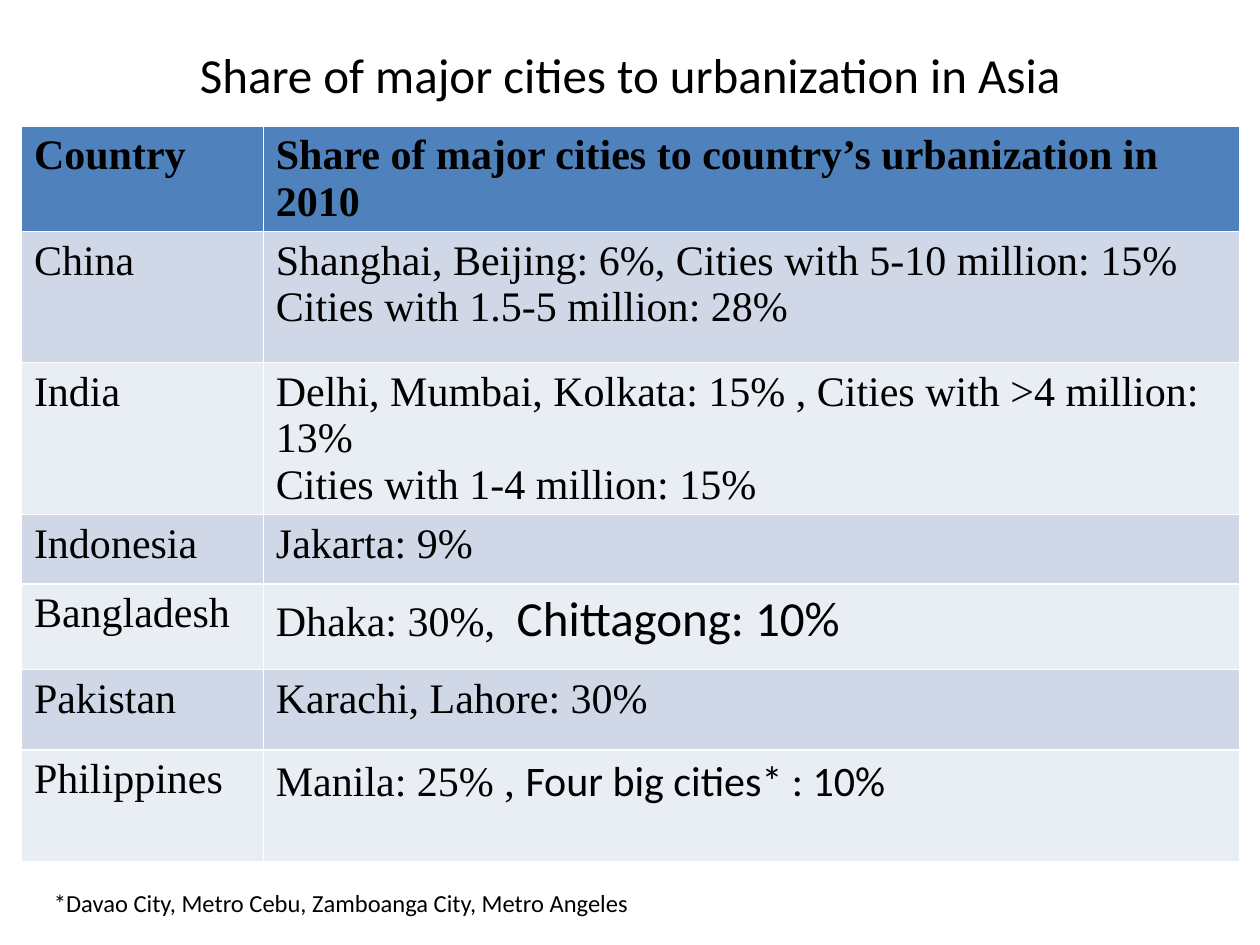
import pptx
import pptx.dml.color
import pptx.enum.text
import pptx.util

Inches = pptx.util.Inches
SERIF = "Times New Roman"
SANS = "Calibri"

TITLE = "Share of major cities to urbanization in Asia"
FOOTNOTE = "*Davao City, Metro Cebu, Zamboanga City, Metro Angeles"
HEADER = ("Country", "Share of major cities to country’s urbanization in 2010")
COUNTRIES = [
    ("China", ["Shanghai, Beijing: 6%, Cities with 5-10 million: 15%",
               "Cities with 1.5-5 million: 28%"]),
    ("India", ["Delhi, Mumbai, Kolkata: 15% , Cities with >4 million: 13%",
               "Cities with 1-4 million: 15%"]),
    ("Indonesia", ["Jakarta: 9%"]),
    ("Bangladesh", [[("Dhaka: 30%, ", SERIF, 24), (" Chittagong: 10%", SANS, 28)]]),
    ("Pakistan", ["Karachi, Lahore: 30%"]),
    ("Philippines", [[("Manila: 25% , ", SERIF, 24), ("Four big cities* : 10%", SANS, 24)]]),
]
COLUMN_WIDTHS = (1.92, 7.75)
ROW_HEIGHTS = (0.63, 1.04, 1.03, 0.55, 0.68, 0.64, 0.89)
HEADER_FILL = "4F81BD"
BAND_FILLS = ("D0D8E8", "E9EDF4")
TEXT_COLOR = "000000"


def paint(color_format, hex_color):
    color_format.rgb = pptx.dml.color.RGBColor.from_string(hex_color)


def add_run(paragraph, text, face, size, bold=False):
    run = paragraph.add_run()
    run.text = text
    font_format = {"name": face, "size": pptx.util.Pt(size), "bold": bold}
    for attribute, value in font_format.items():
        setattr(run.font, attribute, value)
    paint(run.font.color, TEXT_COLOR)


def place(shape, left, top, width, height):
    position = {"left": left, "top": top, "width": width, "height": height}
    for attribute, value in position.items():
        setattr(shape, attribute, Inches(value))


def fill_cell(cell, lines, fill, bold=False):
    cell.fill.solid()
    paint(cell.fill.fore_color, fill)
    for index, line in enumerate(lines):
        frame = cell.text_frame
        paragraph = frame.add_paragraph() if index else frame.paragraphs[0]
        runs = [(line, SERIF, 24)] if isinstance(line, str) else line
        for text, face, size in runs:
            add_run(paragraph, text, face, size, bold)


def add_title(slide):
    title = slide.shapes.title
    place(title, 0.75, 0.17, 8.5, 0.83)
    title.text_frame.vertical_anchor = pptx.enum.text.MSO_ANCHOR.MIDDLE
    heading = title.text_frame.paragraphs[0]
    heading.alignment = pptx.enum.text.PP_ALIGN.CENTER
    add_run(heading, TITLE, SANS, 28)


def add_city_table(slide):
    city_shares = slide.shapes.add_table(
        len(ROW_HEIGHTS), len(COLUMN_WIDTHS), Inches(0.17), Inches(1),
        Inches(sum(COLUMN_WIDTHS)), Inches(sum(ROW_HEIGHTS))).table
    for column, width in zip(city_shares.columns, COLUMN_WIDTHS):
        column.width = Inches(width)
    for row, height in zip(city_shares.rows, ROW_HEIGHTS):
        row.height = Inches(height)
    for column, label in enumerate(HEADER):
        fill_cell(city_shares.cell(0, column), [label], HEADER_FILL, bold=True)
    for index, (country, shares) in enumerate(COUNTRIES):
        band = BAND_FILLS[index % 2]
        fill_cell(city_shares.cell(index + 1, 0), [country], band)
        fill_cell(city_shares.cell(index + 1, 1), shares, band)


def add_footnote(slide):
    footnote = slide.shapes.add_textbox(
        Inches(0.33), Inches(7), Inches(5.67), Inches(0.34))
    footnote.text_frame.word_wrap = True
    add_run(footnote.text_frame.paragraphs[0], FOOTNOTE, SANS, 14)


def main():
    deck = pptx.Presentation()
    deck.slide_width, deck.slide_height = Inches(10), Inches(7.5)
    slide = deck.slides.add_slide(deck.slide_layouts.get_by_name("Title Only"))
    add_title(slide)
    add_city_table(slide)
    add_footnote(slide)
    deck.save("out.pptx")


if __name__ == "__main__":
    main()
